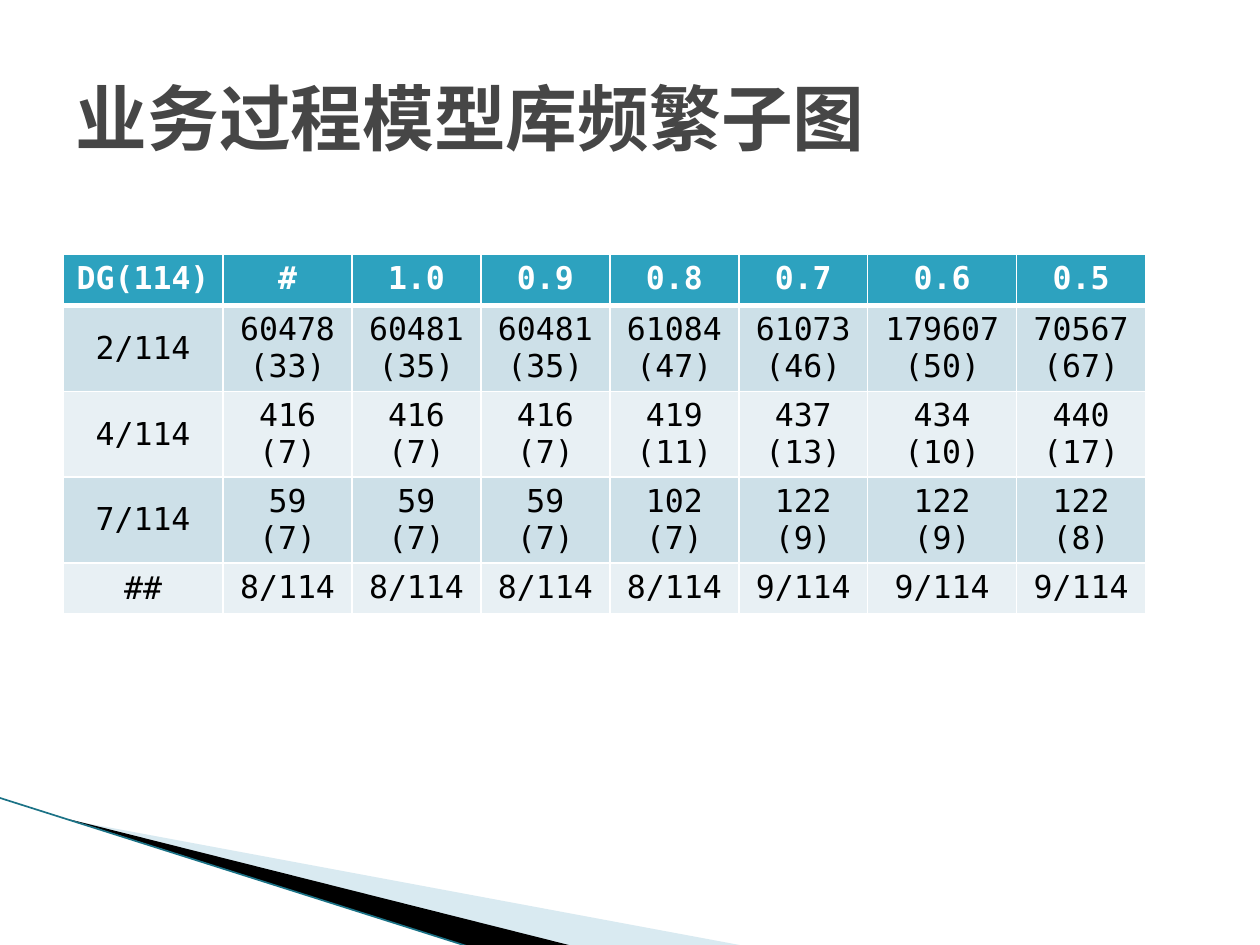
from lxml.etree import SubElement
from pptx import Presentation
from pptx.dml.color import RGBColor
from pptx.enum.shapes import MSO_CONNECTOR as CONN
from pptx.enum.text import MSO_ANCHOR as ANCHOR, MSO_AUTO_SIZE as AUTO, PP_ALIGN as ALIGN
from pptx.oxml.ns import qn
from pptx.util import Pt

COLORS = {
    "title": "464646", "header": "2DA2BF", "band": "CDE0E8", "plain": "E8F0F4",
    "white": "FFFFFF", "black": "000000", "wedge": "A0CBDC", "edge": "1B7286",
}
FONT = "DejaVu Sans Mono"
ROWS = [
    ["DG(114)", "#", "1.0", "0.9", "0.8", "0.7", "0.6", "0.5"],
    ["2/114", "60478\v(33)", "60481\v(35)", "60481\v(35)", "61084\v(47)",
     "61073\v(46)", "179607(50)", "70567\v(67)"],
    ["4/114", "416\v(7)", "416\v(7)", "416\v(7)", "419\v(11)",
     "437\v(13)", "434\v(10)", "440\v(17)"],
    ["7/114", "59\v(7)", "59\v(7)", "59\v(7)", "102\v(7)",
     "122\v(9)", "122\v(9)", "122\v(8)"],
    ["##"] + ["8/114"] * 4 + ["9/114"] * 3,
]
COL_WIDTHS = [91.5] + [73.7] * 5 + [85.1, 73.7]
ROW_HEIGHTS = [29.2, 49, 49, 49, 29.2]


def rgb(name):
    return RGBColor.from_string(COLORS[name])


def format_text(tf, align, color, size, bold):
    for p in tf.paragraphs:
        p.alignment = align
        for r in p.runs:
            for key, value in {"name": FONT, "size": Pt(size), "bold": bold}.items():
                setattr(r.font, key, value)
            r.font.color.rgb = rgb(color)


def add_wedge(slide, points, color, alpha=None):
    start, *rest = [(Pt(x), Pt(y)) for x, y in points]
    builder = slide.shapes.build_freeform(*start)
    builder.add_line_segments(rest, close=True)
    sp = builder.convert_to_shape()
    sp.shadow.inherit = False
    sp.fill.solid()
    sp.fill.fore_color.rgb = rgb(color)
    sp.line.fill.background()
    if alpha:
        clr = sp.fill._xPr.find(qn("a:solidFill"))[0]
        SubElement(clr, qn("a:alpha")).set("val", str(alpha * 1000))


def add_corner(slide, left, top, width, height):
    right, bottom = left + width, top + height
    tip = left + 39
    add_wedge(slide, [(tip, top + 12.5), (right, bottom), (328, bottom)], "wedge", 40)
    add_wedge(slide, [(tip, top + 12), (329, bottom), (268, bottom)], "black")
    edge = slide.shapes.add_connector(
        CONN.STRAIGHT, Pt(left), Pt(top), Pt(268), Pt(bottom))
    edge.line.color.rgb = rgb("edge")
    edge.line.width = Pt(0.95)
    SubElement(edge._element.spPr, qn("a:effectLst"))


def add_borders(cell, widths):
    tcPr = cell._tc.get_or_add_tcPr()
    for i, (side, width) in enumerate(widths.items()):
        ln = tcPr.makeelement(qn(f"a:ln{side}"), {"w": str(Pt(width))})
        fill = SubElement(ln, qn("a:solidFill"))
        SubElement(fill, qn("a:srgbClr")).set("val", COLORS["white"])
        tcPr.insert(i, ln)


def add_counts(slide, left, top):
    table = slide.shapes.add_table(
        len(ROWS), len(COL_WIDTHS), Pt(left), Pt(top),
        Pt(sum(COL_WIDTHS)), Pt(sum(ROW_HEIGHTS))).table
    for col, width in zip(table.columns, COL_WIDTHS):
        col.width = Pt(width)
    for i, (row, height) in enumerate(zip(ROWS, ROW_HEIGHTS)):
        table.rows[i].height = Pt(height)
        head = i == 0
        fill = "header" if head else "band" if i % 2 else "plain"
        for j, text in enumerate(row):
            cell = table.cell(i, j)
            cell.text_frame.text = text
            format_text(cell.text_frame, ALIGN.CENTER,
                        "white" if head else "black", 18, head)
            cell.vertical_anchor = ANCHOR.TOP if head or j else ANCHOR.MIDDLE
            cell.fill.solid()
            cell.fill.fore_color.rgb = rgb(fill)
            add_borders(cell, {"L": 1, "R": 1, "T": 3 if i == 1 else 1,
                               "B": 3 if head else 1})


def set_title(slide, left, top, width, height):
    sp = slide.shapes.title
    box = {"left": left, "top": top, "width": width, "height": height}
    for key, value in box.items():
        setattr(sp, key, Pt(value))
    tf = sp.text_frame
    tf.text = "业务过程模型库频繁子图"
    for key, value in {"word_wrap": True, "auto_size": AUTO.NONE,
                       "vertical_anchor": ANCHOR.MIDDLE}.items():
        setattr(tf, key, value)
    format_text(tf, ALIGN.LEFT, "title", 41, True)


def main():
    prs = Presentation()
    prs.slide_width, prs.slide_height = Pt(720), Pt(540)
    slide = prs.slides.add_slide(prs.slide_layouts[5])
    add_corner(slide, 0, 456, 428, 85)
    add_counts(slide, 36, 145.4)
    set_title(slide, 36, 21.6, 648, 90)
    prs.save("out.pptx")


if __name__ == "__main__":
    main()
